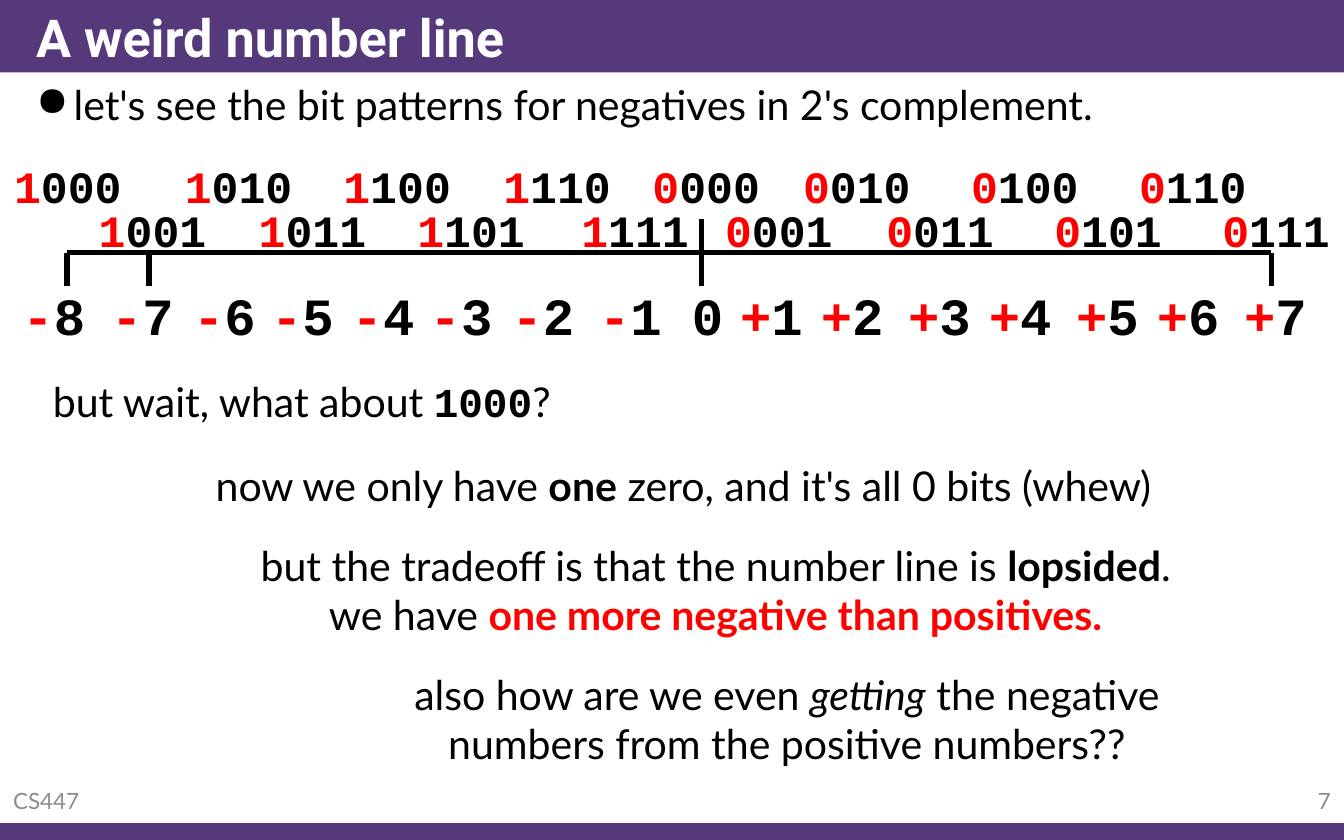
from pptx import Presentation
from pptx.dml.color import RGBColor
from pptx.enum.shapes import MSO_CONNECTOR as Connector, MSO_SHAPE as Shape
from pptx.enum.text import MSO_ANCHOR as Anchor, PP_ALIGN as Align
from pptx.oxml.ns import qn
from pptx.util import Inches, Pt
from lxml.etree import SubElement

WIDTH, HEIGHT = Inches(10), Inches(6.25)
PURPLE, BLACK, RED, WHITE, GREY = "56397B", "000000", "FF0000", "FFFFFF", "8C8C8C"
BODY, HEADING, CODE = "Lato", "Roboto", "Courier New"

BIT_LEFTS = [-0.8, 5.5, 11.9, 17.4, 23.7, 29.2, 35.6, 41.4,
             46.7, 52.1, 57.9, 64.1, 70.4, 76.6, 82.9, 89.1]
LABEL_LEFTS = [0.6, 7.2, 13.3, 19.1, 25.1, 30.9, 37, 43.5,
               50.5, 54, 60, 66.5, 72.5, 79, 85, 91.5]


def color(value):
    return RGBColor.from_string(value)


def across(percent):
    return round(WIDTH * percent / 100)


def down(percent):
    return round(HEIGHT * percent / 100)


def area(left, top, width, height):
    return across(left), down(top), across(width), down(height)


def add_bar(slide, top, height):
    shape = slide.shapes.add_shape(Shape.RECTANGLE, *area(0, top, 100, height))
    shape.shadow.inherit = False
    shape.fill.solid()
    shape.fill.fore_color.rgb = color(PURPLE)
    shape.line.fill.background()


def add_line(slide, left, top, right, bottom):
    line = slide.shapes.add_connector(
        Connector.STRAIGHT, across(left), down(top), across(right), down(bottom))
    line.line.color.rgb = color(BLACK)
    line.line.width = Pt(3)
    SubElement(line._element.spPr, qn("a:effectLst"))


def add_text(slide, box, *runs, size=22, font=BODY, fill=BLACK, bold=False,
             align=Align.CENTER, anchor=Anchor.TOP, wrap=True):
    frame = slide.shapes.add_textbox(*area(*box)).text_frame
    frame.word_wrap = wrap
    frame.vertical_anchor = anchor
    paragraph = frame.paragraphs[0]
    paragraph.alignment = align
    for text, changes in runs:
        run = paragraph.add_run()
        run.text = text
        run.font.size = Pt(size)
        run.font.name = changes.get("font", font)
        run.font.bold = changes.get("bold", bold)
        run.font.italic = changes.get("italic", False)
        run.font.color.rgb = color(changes.get("fill", fill))
    return paragraph


def add_bullet(paragraph, indent):
    properties = paragraph._p.get_or_add_pPr()
    properties.set("marL", str(indent))
    properties.set("indent", str(-indent))
    SubElement(properties, qn("a:buChar"), char="●")


def add_number(slide, value, bit_left, label_left):
    bits = format(value % 16, "04b")
    bit_top = 23.36 if value % 2 else 18.08
    add_text(slide, (bit_left, bit_top, 11.7, 8), (bits[0], {"fill": RED}),
             (bits[1:], {}), size=24, font=CODE, bold=True, wrap=False)
    if value:
        sign, digit = f"{value:+d}"
        runs, width = [(sign, {"fill": RED}), (digit, {})], 6.8
    else:
        runs, width = [("0", {})], 3.6
    add_text(slide, (label_left, 32.96, width, 9.12), *runs,
             size=28, font=CODE, bold=True, wrap=False)


def add_number_line(slide):
    axis, tick_end = 30.08, 34.08
    for start in (5, 10.9):
        add_line(slide, start, axis, 94.6, axis)
    for left, top in ((5, axis), (11.1, axis), (52.2, 26.08), (94.6, axis)):
        add_line(slide, left, top, left, tick_end)
    for value, bit_left, label_left in zip(range(-8, 8), BIT_LEFTS, LABEL_LEFTS):
        add_number(slide, value, bit_left, label_left)


def add_frame(slide):
    add_bar(slide, 98, 2)
    add_bar(slide, 0, 8.64)
    add_text(slide, (1.7, 0, 98.3, 8.64), ("A weird number line", {}), size=28,
             font=HEADING, fill=WHITE, bold=True, align=Align.LEFT, anchor=Anchor.MIDDLE)
    for left, width, text, align in ((0, 13.3, "CS447", Align.LEFT),
                                     (92.5, 7.5, "7", Align.RIGHT)):
        add_text(slide, (left, 92.64, width, 5.28), (text, {}), size=12,
                 fill=GREY, align=align, anchor=Anchor.MIDDLE)


def add_remarks(slide):
    intro = add_text(slide, (1.7, 8.64, 98.3, 8.64),
                     ("let's see the bit patterns for negatives in 2's complement.", {}),
                     align=Align.LEFT)
    add_bullet(intro, across(2.8))
    add_text(slide, (2.2, 44, 40.5, 7.52), ("but wait, what about ", {}),
             ("1000", {"font": CODE, "bold": True}), ("?", {}))
    add_text(slide, (14.3, 54.08, 73.1, 7.52), ("now we only have ", {}),
             ("one", {"bold": True}), (" zero, and it's all 0 bits (whew)", {}))
    add_text(slide, (16.7, 63.52, 73.1, 13.44),
             ("but the tradeoff is that the number line is ", {}),
             ("lopsided", {"bold": True}), (". we have ", {}),
             ("one more negative than positives.", {"bold": True, "fill": RED}))
    add_text(slide, (25.4, 78.88, 66.3, 13.44), ("also how are we even ", {}),
             ("getting", {"italic": True}),
             (" the negative numbers from the positive numbers??", {}))


def main():
    presentation = Presentation()
    presentation.slide_width, presentation.slide_height = WIDTH, HEIGHT
    slide = presentation.slides.add_slide(presentation.slide_layouts[6])
    add_frame(slide)
    add_number_line(slide)
    add_remarks(slide)
    presentation.save("out.pptx")


if __name__ == "__main__":
    main()
